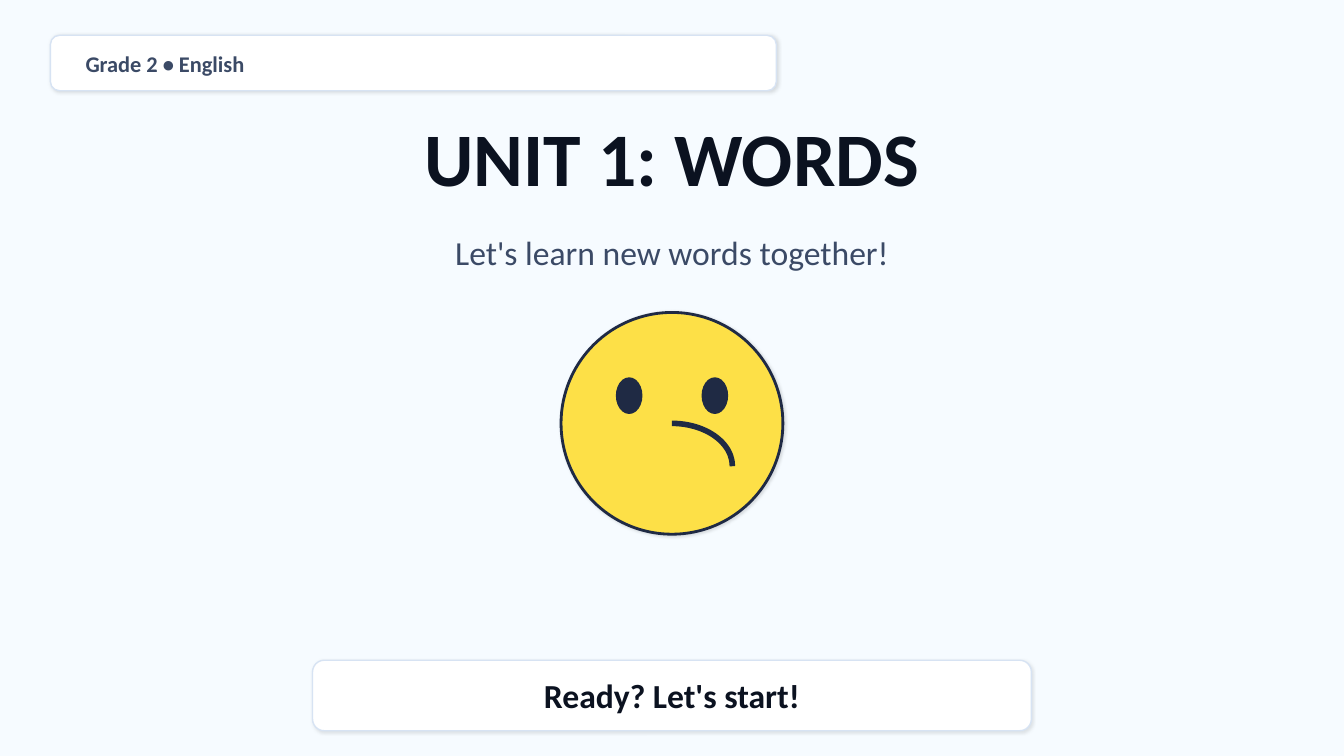
from lxml import etree
from pptx import Presentation
from pptx.dml.color import RGBColor
from pptx.enum import shapes, text
from pptx.oxml.ns import qn
from pptx.util import Inches, Pt

COLORS = {"sky": "F6FBFF", "white": "FFFFFF", "border": "D7E3F3", "yellow": "FDE047",
          "navy": "1F2A44", "slate": "3B4A66", "ink": "0B1220", "shadow": "000000"}
FONT = "Calibri"
WIDTH, HEIGHT = 13.33, 7.5

TITLE = ("UNIT 1: WORDS", (0.8, 1.05, 11.73, 1), 54, "ink", True, "CENTER")
GRADE = ("Grade 2 • English", (0.75, 0.42, 6.7, 0.42), 16, "slate", True, "LEFT")
SUBTITLE = ("Let's learn new words together!", (1.3, 2.18, 10.73, 0.65), 24, "slate", False, "CENTER")
READY = ("Ready? Let's start!", (3.1, 6.62, 7.13, 0.55), 24, "ink", True, "CENTER")

GRADE_CARD = (0.5, 0.35, 7.2, 0.55)
READY_CARD = (3.1, 6.55, 7.13, 0.7)
FACE_TOP, FACE_SIZE = 3.1, 2.2
EYE_TOP, EYE_WIDTH, EYE_HEIGHT, EYE_SPACING = 3.75, 0.25, 0.35, 0.85
MOUTH_TOP, MOUTH_WIDTH, MOUTH_HEIGHT = 4.2, 1.2, 0.85


def color(name):
    return RGBColor.from_string(COLORS[name])


def centered(top, width, height, offset=0):
    return WIDTH / 2 + offset - width / 2, top, width, height


def add_shadow(shape, opacity, blur, distance):
    effects = shape._element.spPr.find(qn("a:effectLst"))
    shadow = etree.SubElement(effects, qn("a:outerShdw"), blurRad=str(Pt(blur)),
                              dist=str(Pt(distance)), dir=str(45 * 60000),
                              algn="bl", rotWithShape="0")
    tint = etree.SubElement(shadow, qn("a:srgbClr"), val=COLORS["shadow"])
    etree.SubElement(tint, qn("a:alpha"), val=str(opacity * 1000))


def add_figure(page, kind, place, fill, line, weight, shadow=None):
    shape = page.shapes.add_shape(kind, *map(Inches, place))
    if fill:
        shape.fill.solid()
        shape.fill.fore_color.rgb = color(fill)
    else:
        shape.fill.background()
    shape.line.color.rgb = color(line)
    shape.line.width = Pt(weight)
    shape.shadow.inherit = False
    if shadow:
        add_shadow(shape, *shadow)


def write(box, content):
    words, place, size, ink, bold, align = content
    box.left, box.top, box.width, box.height = map(Inches, place)
    frame = box.text_frame
    frame.word_wrap = True
    frame.auto_size = text.MSO_AUTO_SIZE.NONE
    frame.vertical_anchor = text.MSO_ANCHOR.MIDDLE
    frame.text = words
    para = frame.paragraphs[0]
    para.alignment = text.PP_ALIGN[align]
    para.font.name = FONT
    para.font.size = Pt(size)
    para.font.bold = bold
    para.font.color.rgb = color(ink)


def add_text(page, content):
    write(page.shapes.add_textbox(*map(Inches, content[1])), content)


def main():
    deck = Presentation()
    deck.slide_width, deck.slide_height = Inches(WIDTH), Inches(HEIGHT)
    page = deck.slides.add_slide(deck.slide_layouts[5])
    page.background.fill.solid()
    page.background.fill.fore_color.rgb = color("sky")
    kinds = shapes.MSO_SHAPE

    write(page.shapes.title, TITLE)
    add_figure(page, kinds.ROUNDED_RECTANGLE, GRADE_CARD, "white", "border", 1, (12, 2.5, 1))
    add_text(page, GRADE)
    add_text(page, SUBTITLE)

    add_figure(page, kinds.OVAL, centered(FACE_TOP, FACE_SIZE, FACE_SIZE),
               "yellow", "navy", 2, (12, 2.2, 1))
    for side in (-1, 1):
        eye = centered(EYE_TOP, EYE_WIDTH, EYE_HEIGHT, side * EYE_SPACING / 2)
        add_figure(page, kinds.OVAL, eye, "navy", "navy", 1)
    add_figure(page, kinds.ARC, centered(MOUTH_TOP, MOUTH_WIDTH, MOUTH_HEIGHT), None, "navy", 4)

    add_figure(page, kinds.ROUNDED_RECTANGLE, READY_CARD, "white", "border", 1, (10, 2.2, 0.8))
    add_text(page, READY)
    deck.save("out.pptx")


if __name__ == "__main__":
    main()
